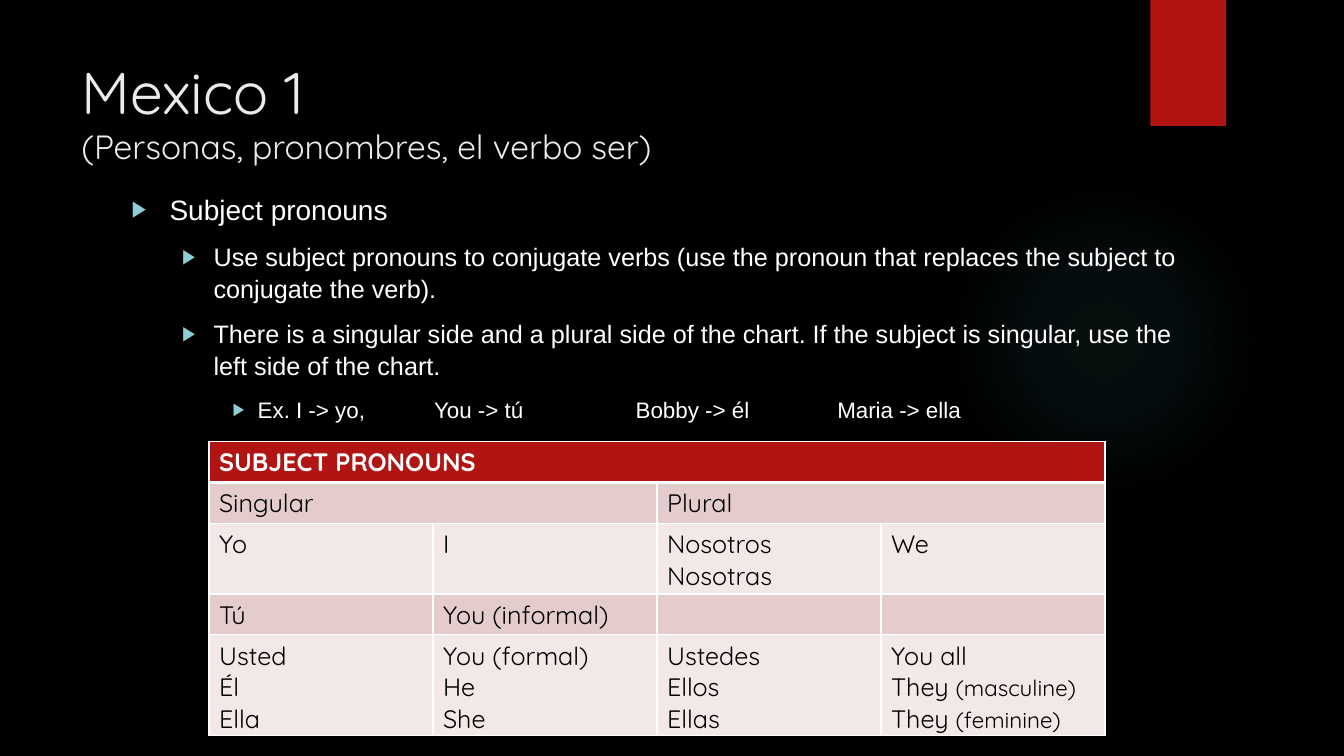
from dataclasses import dataclass
from lxml import etree
from pptx import Presentation
from pptx import util as u
from pptx.dml import color
from pptx.enum import shapes, text
from pptx.oxml import ns

Pt = u.Pt


@dataclass(frozen=True)
class Theme:
    back: str = "000000"
    white: str = "FFFFFF"
    title: str = "EBEBEB"
    red: str = "B01513"
    glow: str = "50B9C1"
    mark: str = "8AD0D6"
    dark: str = "E4CCCC"
    light: str = "F2E8E7"
    head: str = "Quicksand"
    body: str = "Arial"
    big: int = 42
    sub: int = 24
    cell: int = 18
    note: int = 16
    levels: tuple = (20, 18, 16)


LOOK = Theme()
INDENTS = [(27, 27), (58.5, 22.5), (90, 18)]
POINTS = [
    (0, "Subject pronouns"),
    (1, "Use subject pronouns to conjugate verbs (use the pronoun that "
        "replaces the subject to conjugate the verb)."),
    (1, "There is a singular side and a plural side of the chart. If the "
        "subject is singular, use the left side of the chart."),
    (2, "Ex. I -> yo,\t\tYou -> tú\t\t\tBobby -> él\t\tMaria -> ella"),
]
ROWS = [
    ["SUBJECT PRONOUNS", None, None, None],
    ["Singular", None, "Plural", None],
    ["Yo", "I", "Nosotros\nNosotras", "We"],
    ["Tú", "You (informal)", "", ""],
    ["Usted\nÉl\nElla", "You (formal)\nHe\nShe", "Ustedes\nEllos\nEllas",
     "You all\nThey (masculine)\nThey (feminine)"],
]
SPANS = [(0, 0, 3), (1, 0, 1), (1, 2, 3)]
SMALL = ("(masculine)", "(feminine)")


def rgb(code):
    return color.RGBColor.from_string(code)


def node(parent, tag, **attrs):
    return etree.SubElement(parent, ns.qn(tag), attrs)


def write(para, words, font=LOOK.head, size=LOOK.cell, ink=LOOK.back,
          bold=False):
    run = para.add_run()
    run.text = words
    run.font.name = font
    run.font.size = Pt(size)
    run.font.bold = bold
    run.font.color.rgb = rgb(ink)


def shape(slide, kind, box, fill, depth):
    item = slide.shapes.add_shape(kind, *map(Pt, box))
    item.shadow.inherit = False
    item.fill.solid()
    item.fill.fore_color.rgb = rgb(fill)
    item.line.fill.background()
    item._element.getparent().insert(depth, item._element)
    return item


def fade(item, code, stops):
    props = item._element.spPr
    old = props.find(ns.qn("a:solidFill"))
    grad = etree.Element(ns.qn("a:gradFill"), rotWithShape="1")
    props.replace(old, grad)
    group = node(grad, "a:gsLst")
    for place, alpha in stops:
        stop = node(group, "a:gs", pos=str(place * 1000))
        tint = node(stop, "a:srgbClr", val=code)
        node(tint, "a:alpha", val=str(alpha * 1000))
    way = node(grad, "a:path", path="circle")
    node(way, "a:fillToRect", l="50000", t="50000", r="50000", b="50000")


def heading(slide):
    title = slide.shapes.title
    title.left, title.top, title.width, title.height = map(
        Pt, (51, 36, 741, 110))
    frame = title.text_frame
    frame.auto_size = text.MSO_AUTO_SIZE.NONE
    frame.vertical_anchor = text.MSO_ANCHOR.TOP
    para = frame.paragraphs[0]
    para.alignment = text.PP_ALIGN.LEFT
    write(para, "Mexico 1", size=LOOK.big, ink=LOOK.title)
    para.add_line_break()
    write(para, "(Personas, pronombres, el verbo ser)",
          size=LOOK.sub, ink=LOOK.title)


def bullet(para, level):
    left, hang = INDENTS[level]
    para.level = level
    para.line_spacing = 1.05
    props = para._p.get_or_add_pPr()
    props.set("marL", str(Pt(left)))
    props.set("indent", str(-Pt(hang)))
    props.set("defTabSz", str(Pt(36)))
    node(node(props, "a:buClr"), "a:srgbClr", val=LOOK.mark)
    node(props, "a:buSzPct", val="80000")
    node(props, "a:buFont", typeface=LOOK.body)
    node(props, "a:buChar", char="▶")


def notes(slide):
    box = slide.shapes.add_textbox(*map(Pt, (87, 132.5, 765.5, 330.5)))
    frame = box.text_frame
    frame.word_wrap = True
    for index, (level, words) in enumerate(POINTS):
        para = frame.add_paragraph() if index else frame.paragraphs[0]
        para.space_before = Pt(10 if index else 0)
        bullet(para, level)
        write(para, words, LOOK.body, LOOK.levels[level], LOOK.white)


def border(cell, base):
    props = cell._tc.get_or_add_tcPr()
    sides = [("a:lnL", 1), ("a:lnR", 1), ("a:lnT", 1), ("a:lnB", base)]
    for index, (tag, width) in enumerate(sides):
        line = etree.Element(ns.qn(tag), w=str(Pt(width)))
        node(node(line, "a:solidFill"), "a:srgbClr", val=LOOK.white)
        props.insert(index, line)


def fill(cell, words, row):
    cell.fill.solid()
    tint = LOOK.dark if row % 2 else LOOK.light
    cell.fill.fore_color.rgb = rgb(LOOK.red if row == 0 else tint)
    border(cell, 3 if row == 0 else 1)
    if words is None:
        return
    frame = cell.text_frame
    for index, line in enumerate(words.split("\n")):
        para = frame.add_paragraph() if index else frame.paragraphs[0]
        para.font.size = Pt(LOOK.cell)
        tail = next((part for part in SMALL if line.endswith(part)), "")
        lead = line.removesuffix(tail)
        if lead:
            write(para, lead, ink=LOOK.back if row else LOOK.white,
                  bold=row == 0)
        if tail:
            write(para, tail, size=LOOK.note)


def chart(slide):
    frame = slide.shapes.add_table(
        len(ROWS), 4, *map(Pt, (149.3, 315.4, 640, 210)))
    table = frame.table
    for row, (line, words) in enumerate(zip(table.rows, ROWS)):
        line.height = Pt(29.2)
        for col, part in enumerate(words):
            fill(table.cell(row, col), part, row)
    for row, first, last in SPANS:
        table.cell(row, first).merge(table.cell(row, last))
    frame.height = Pt(210)


def main():
    deck = Presentation()
    deck.slide_width, deck.slide_height = Pt(960), Pt(540)
    slide = deck.slides.add_slide(deck.slide_layouts[5])
    slide.background.fill.solid()
    slide.background.fill.fore_color.rgb = rgb(LOOK.back)
    kinds = shapes.MSO_SHAPE
    glow = shape(slide, kinds.OVAL, (677.5, 132, 222, 222), LOOK.glow, 2)
    fade(glow, LOOK.glow, [(0, 7), (36, 6), (69, 0), (100, 0)])
    shape(slide, kinds.RECTANGLE, (821.8, 0, 54, 90), LOOK.red, 3)
    heading(slide)
    notes(slide)
    chart(slide)
    deck.save("out.pptx")


if __name__ == "__main__":
    main()
